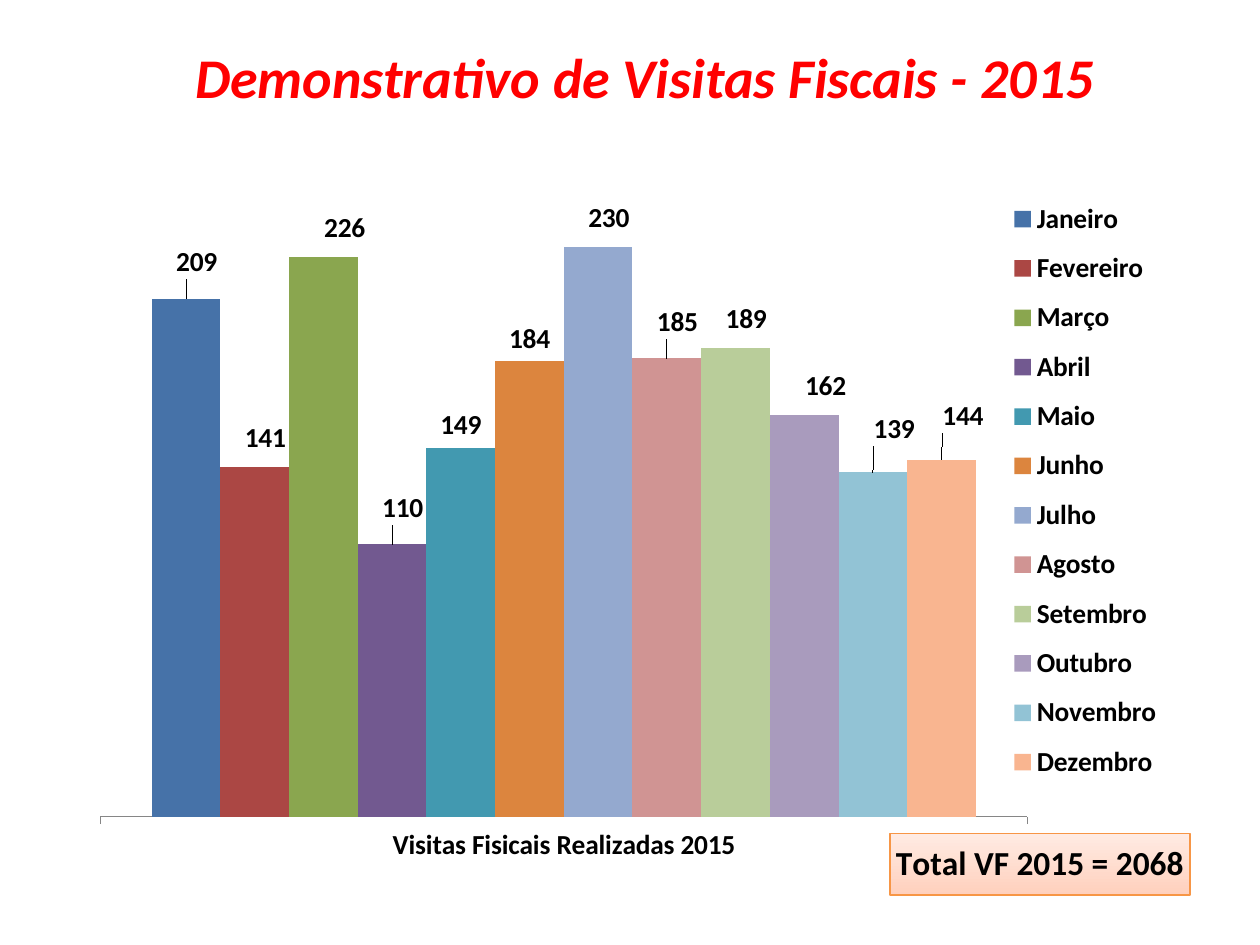
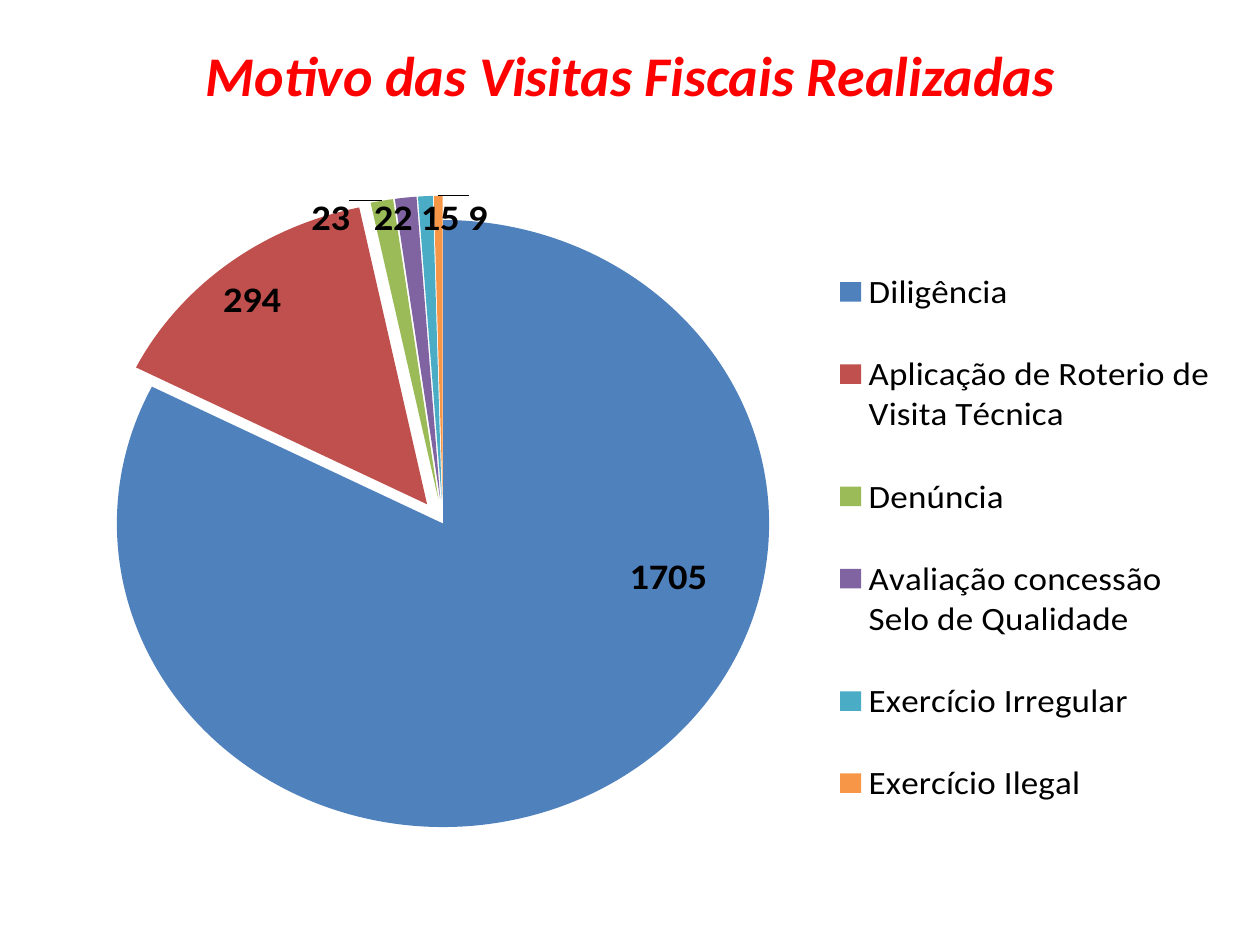
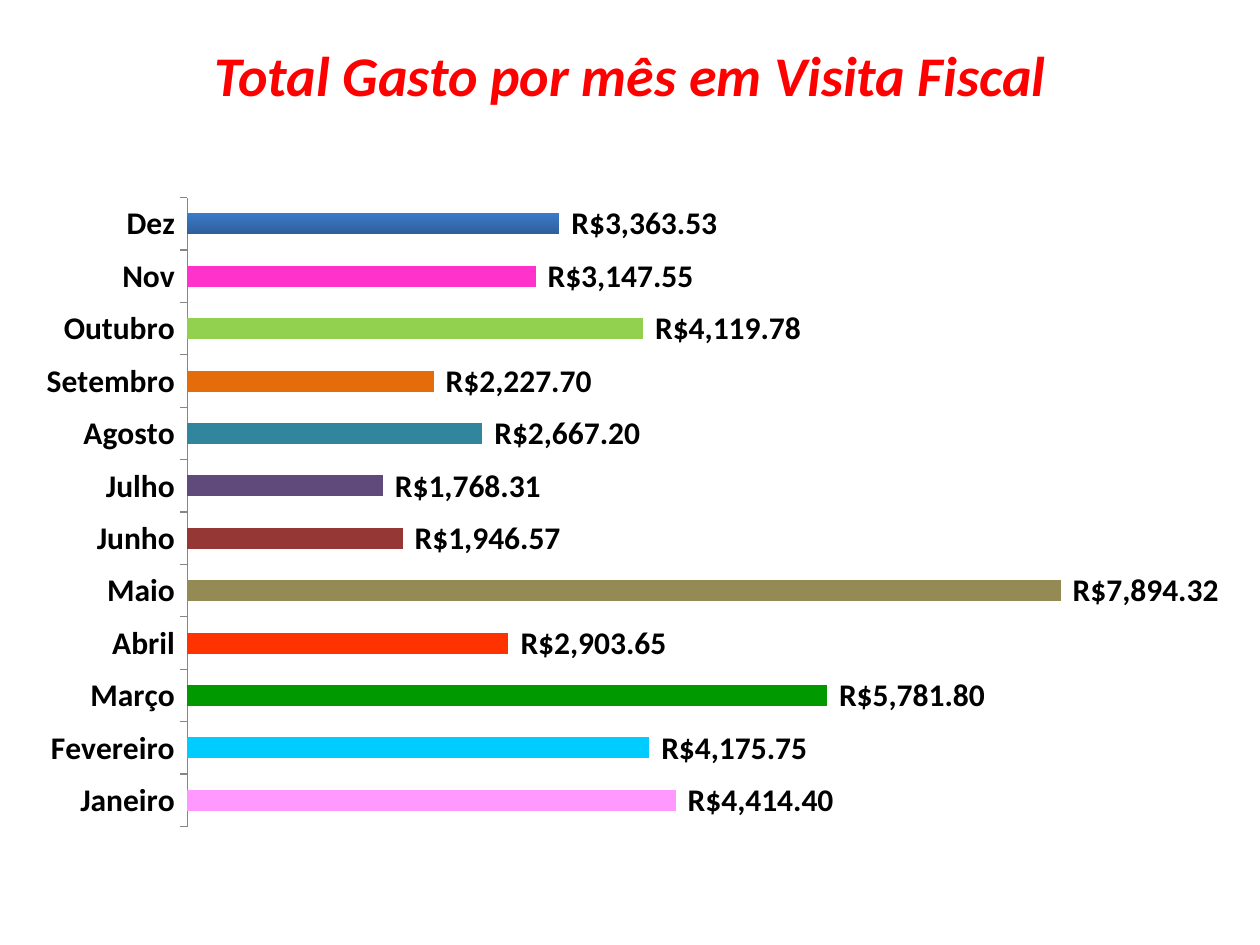
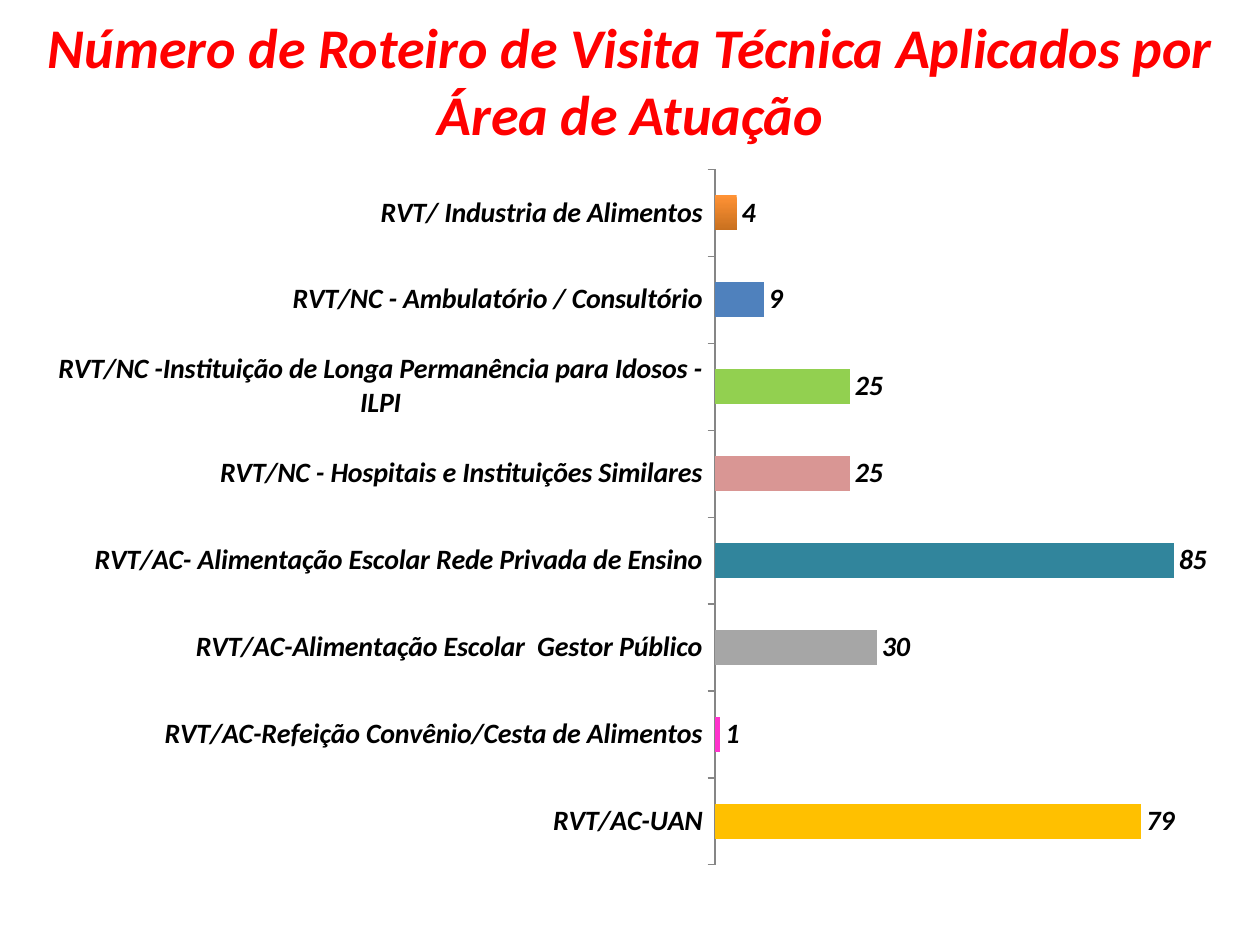
from pptx import Presentation
from pptx.chart.data import CategoryChartData
from pptx.dml.color import RGBColor
from pptx.enum.chart import XL_CHART_TYPE as Kind, XL_LABEL_POSITION as LabelSpot
from pptx.enum.chart import XL_LEGEND_POSITION as LegendSpot, XL_TICK_MARK as Tick
from pptx.enum.text import MSO_ANCHOR, MSO_AUTO_SIZE, PP_ALIGN
from pptx.oxml import parse_xml
from pptx.oxml.ns import nsdecls, qn
from pptx.util import Inches, Pt

FONT = "Calibri"
WIDTH, HEIGHT = Inches(10), Inches(7.5)
COLUMNS, ROWS = 100, 75
TITLE_ONLY = 5
COLORS = {
    "title": "FF0000", "text": "000000", "axis": "868686",
    "blue": "4F81BD", "red": "C0504D", "green": "9BBB59",
    "purple": "8064A2", "teal": "4BACC6", "orange": "F79646",
    "box top": "FFEBE3", "box bottom": "FFD0BD",
    "blue top": "3C7BC9", "blue bottom": "2E5F99",
    "orange top": "FF9235", "orange bottom": "C8701F",
    "pink": "FF99FF", "sky": "00CCFF", "leaf": "009900", "scarlet": "FF3300",
    "khaki": "948A54", "wine": "953735", "violet": "604A7B", "sea": "31859C",
    "rust": "E46C0A", "lime": "92D050", "magenta": "FF33CC",
    "gold": "FFC000", "gray": "A6A6A6", "rose": "D99694",
}
CURRENCY = '_("R$"* #,##0.00_);_("R$"* \\(#,##0.00\\);_("R$"* "-"??_);_(@_)'
NO_LEADERS = (
    f'<c:extLst {nsdecls("c")}><c:ext uri="{{CE6537A1-D6FC-4f65-9D91-7224C49458BB}}" '
    'xmlns:c15="http://schemas.microsoft.com/office/drawing/2012/chart">'
    '<c15:showLeaderLines val="0"/></c:ext></c:extLst>')

MONTHLY_VISITS = [
    ("Janeiro", 209, "4672A8", (0.01, -0.02)),
    ("Fevereiro", 141, "AB4744", (0.01, -0.01)),
    ("Março", 226, "8AA64F", (0.02, -0.01)),
    ("Abril", 110, "725990", (0.01, -0.02)),
    ("Maio", 149, "4299B0", None),
    ("Junho", 184, "DC853E", None),
    ("Julho", 230, "94A9CF", (0.01, -0.01)),
    ("Agosto", 185, "D09493", (0.01, -0.02)),
    ("Setembro", 189, "B9CD9A", (0.01, -0.01)),
    ("Outubro", 162, "A99BBD", (0.02, -0.01)),
    ("Novembro", 139, "92C3D5", (0.02, -0.03)),
    ("Dezembro", 144, "F9B590", (0.02, -0.03)),
]
VISIT_REASONS = [
    ("Diligência", 1705, "blue"),
    ("Aplicação de Roterio de Visita Técnica", 294, "red"),
    ("Denúncia", 23, "green"),
    ("Avaliação concessão Selo de Qualidade", 22, "purple"),
    ("Exercício Irregular", 15, "teal"),
    ("Exercício Ilegal", 9, "orange"),
]
MONTHLY_COSTS = [
    ("Janeiro", 4414.40, "pink"),
    ("Fevereiro", 4175.75, "sky"),
    ("Março", 5781.80, "leaf"),
    ("Abril", 2903.65, "scarlet"),
    ("Maio", 7894.32, "khaki"),
    ("Junho", 1946.57, "wine"),
    ("Julho", 1768.31, "violet"),
    ("Agosto", 2667.20, "sea"),
    ("Setembro", 2227.70, "rust"),
    ("Outubro", 4119.78, "lime"),
    ("Nov", 3147.55, "magenta"),
    ("Dez", 3363.53, ("blue top", "blue bottom")),
]
VISITS_BY_AREA = [
    ("RVT/AC-UAN", 79, "gold"),
    ("RVT/AC-Refeição Convênio/Cesta de Alimentos", 1, "magenta"),
    ("RVT/AC-Alimentação Escolar  Gestor Público", 30, "gray"),
    ("RVT/AC- Alimentação Escolar Rede Privada de Ensino", 85, "sea"),
    ("RVT/NC - Hospitais e Instituições Similares", 25, "rose"),
    ("RVT/NC -Instituição de Longa Permanência para Idosos - ILPI", 25, "lime"),
    ("RVT/NC - Ambulatório / Consultório", 9, "blue"),
    ("RVT/ Industria de Alimentos", 4, ("orange top", "orange bottom")),
]


def grid(left, top, width, height):
    column, row = WIDTH / COLUMNS, HEIGHT / ROWS
    return [int(cells * unit) for cells, unit in
            zip((left, top, width, height), (column, row, column, row))]


def rgb(name):
    return RGBColor.from_string(COLORS.get(name, name))


def paint(fill, color):
    if isinstance(color, tuple):
        fill.gradient()
        fill.gradient_angle = 270
        for stop, name in zip(fill.gradient_stops, color):
            stop.color.rgb = rgb(name)
    else:
        fill.solid()
        fill.fore_color.rgb = rgb(color)


def style_font(font, size, color="text", bold=True, italic=False):
    font.name, font.size, font.bold, font.italic = FONT, Pt(size), bold, italic
    font.color.rgb = rgb(color)


def set_layout(parent, index, shares, modes=("xMode", "yMode"), target=""):
    for old in parent.findall(qn("c:layout")):
        parent.remove(old)
    parts = [f'<c:layoutTarget val="{target}"/>'] if target else []
    parts += [f'<c:{mode} val="edge"/>' for mode in modes]
    parts += [f'<c:{key} val="{share}"/>' for key, share in zip("xywh", shares)]
    parent.insert(index, parse_xml(
        f'<c:layout {nsdecls("c")}><c:manualLayout>{"".join(parts)}'
        '</c:manualLayout></c:layout>'))


def add_page(deck, title, cells):
    page = deck.slides.add_slide(deck.slide_layouts[TITLE_ONLY])
    box = page.shapes.title
    box.left, box.top, box.width, box.height = grid(*cells)
    frame = box.text_frame
    frame.text = title
    frame.word_wrap = True
    frame.auto_size = MSO_AUTO_SIZE.NONE
    frame.vertical_anchor = MSO_ANCHOR.TOP
    para = frame.paragraphs[0]
    para.alignment = PP_ALIGN.CENTER
    style_font(para.font, 32, "title", italic=True)
    return page


def add_chart(page, kind, cells, categories, series, plot_shares, size,
              bold=True, italic=False):
    data = CategoryChartData()
    data.categories = categories
    for name, values in series:
        data.add_series(name, values)
    chart = page.shapes.add_chart(kind, *grid(*cells), data).chart
    chart.has_title = False
    chart.has_legend = False
    style_font(chart.font, size, bold=bold, italic=italic)
    set_layout(chart.element.find(".//" + qn("c:plotArea")), 0, plot_shares, target="inner")
    plot = chart.plots[0]
    plot.vary_by_categories = kind == Kind.PIE
    plot.has_data_labels = True
    plot.data_labels.show_value = True
    return chart


def style_axes(chart, maximum):
    values, categories = chart.value_axis, chart.category_axis
    values.minimum_scale, values.maximum_scale = 0, maximum
    values.has_major_gridlines = False
    values.visible = False
    categories.major_tick_mark = Tick.OUTSIDE
    categories.format.line.color.rgb = rgb("axis")
    categories.format.line.width = Pt(0.75)
    chart.plots[0].gap_width = 150
    chart.plots[0].data_labels.position = LabelSpot.OUTSIDE_END


def add_legend(chart, shares, size, bold):
    chart.has_legend = True
    chart.legend.position = LegendSpot.RIGHT
    chart.legend.include_in_layout = False
    style_font(chart.legend.font, size, bold=bold)
    set_layout(chart.element.find(".//" + qn("c:legend")), 1, shares)


def move_label(chart, series_index, offset, spot, size):
    label = chart.plots[0].series[series_index].points[0].data_label
    label.position = spot
    style_font(label.font, size)
    holder = chart.element.findall(".//" + qn("c:ser"))[series_index]
    set_layout(holder.find(".//" + qn("c:dLbl")), 1, offset, modes=())


def hide_leaders(chart):
    for labels in chart.element.findall(".//" + qn("c:ser") + "/" + qn("c:dLbls")):
        for old in labels.findall(qn("c:showLeaderLines")):
            labels.remove(old)
        labels.append(parse_xml(NO_LEADERS))


def paint_points(chart, rows):
    points = chart.plots[0].series[0].points
    for index, (_, _, color) in enumerate(rows):
        paint(points[index].format.fill, color)


def add_bars(page, cells, rows, plot_shares, maximum, size, italic=False):
    names, values, _ = zip(*rows)
    chart = add_chart(page, Kind.BAR_CLUSTERED, cells, names, [("Series 1", values)],
                      plot_shares, size, italic=italic)
    style_axes(chart, maximum)
    paint_points(chart, rows)
    return chart


def add_visit_columns(page):
    chart = add_chart(page, Kind.COLUMN_CLUSTERED, (7.9, 13.1, 86.6, 58),
                      ["Visitas Fisicais Realizadas 2015"],
                      [(month, [visits]) for month, visits, _, _ in MONTHLY_VISITS],
                      (0, 0.045, 0.869, 0.862), 16)
    style_axes(chart, 250)
    chart.plots[0].overlap = 0
    for index, (_, _, color, offset) in enumerate(MONTHLY_VISITS):
        paint(chart.plots[0].series[index].format.fill, color)
        if offset:
            move_label(chart, index, offset, LabelSpot.OUTSIDE_END, 16)
    hide_leaders(chart)
    add_legend(chart, (0.852, 0.03, 0.148, 0.847), 16, True)
    add_total(chart, "Total VF 2015 = 2068")


def add_total(chart, text):
    title = chart.chart_title
    title.text_frame.text = text
    style_font(title.text_frame.paragraphs[0].font, 19.5)
    paint(title.format.fill, ("box top", "box bottom"))
    title.format.line.color.rgb = rgb("orange")
    title.format.line.width = Pt(1)
    set_layout(chart.element.find(".//" + qn("c:title")), 1, (0.74, 0.93))
    title.include_in_layout = True


def add_explosion(anchor, percent):
    anchor.addprevious(parse_xml(f'<c:explosion {nsdecls("c")} val="{percent}"/>'))


def add_reason_pie(page):
    names, values, _ = zip(*VISIT_REASONS)
    chart = add_chart(page, Kind.PIE, (2.8, 11.5, 94.5, 58.3), names,
                      [("Series 1", values)], (0.027, 0, 0.631, 0.959), 20, bold=False)
    paint_points(chart, VISIT_REASONS)
    first_point = chart.element.find(".//" + qn("c:dPt"))
    add_explosion(first_point, 8)
    add_explosion(first_point.find(qn("c:spPr")), 0)
    labels = chart.plots[0].series[0].data_labels
    labels.show_value = True
    labels.position = LabelSpot.BEST_FIT
    style_font(labels.font, 22)
    move_label(chart, 0, (0.01, -0.34), LabelSpot.BEST_FIT, 22)
    add_legend(chart, (0.675, 0.05, 0.325, 0.9), 20, False)


def main():
    deck = Presentation()
    deck.slide_width, deck.slide_height = WIDTH, HEIGHT
    one_line = (2.8, 2.75, 94.5, 6.4)

    add_visit_columns(add_page(deck, "Demonstrativo de Visitas Fiscais - 2015",
                               (6.7, 2.9, 89, 6.4)))
    add_reason_pie(add_page(deck, "Motivo das Visitas Fiscais Realizadas", one_line))

    page = add_page(deck, "Total Gasto por mês em Visita Fiscal", one_line)
    costs = add_bars(page, (2, 14.65, 95.3, 52), MONTHLY_COSTS,
                     (0.135, 0.02, 0.83, 0.96), 9000, 18)
    labels = costs.plots[0].data_labels
    labels.number_format = CURRENCY
    labels.number_format_is_linked = False

    page = add_page(deck, "Número de Roteiro de Visita Técnica Aplicados por Área de Atuação",
                    (2.8, 0.5, 94.5, 11.8))
    add_bars(page, (2.8, 12.3, 94.5, 57.5), VISITS_BY_AREA,
             (0.571, 0.02, 0.408, 0.96), 90, 16, italic=True)

    deck.save("out.pptx")


if __name__ == "__main__":
    main()
